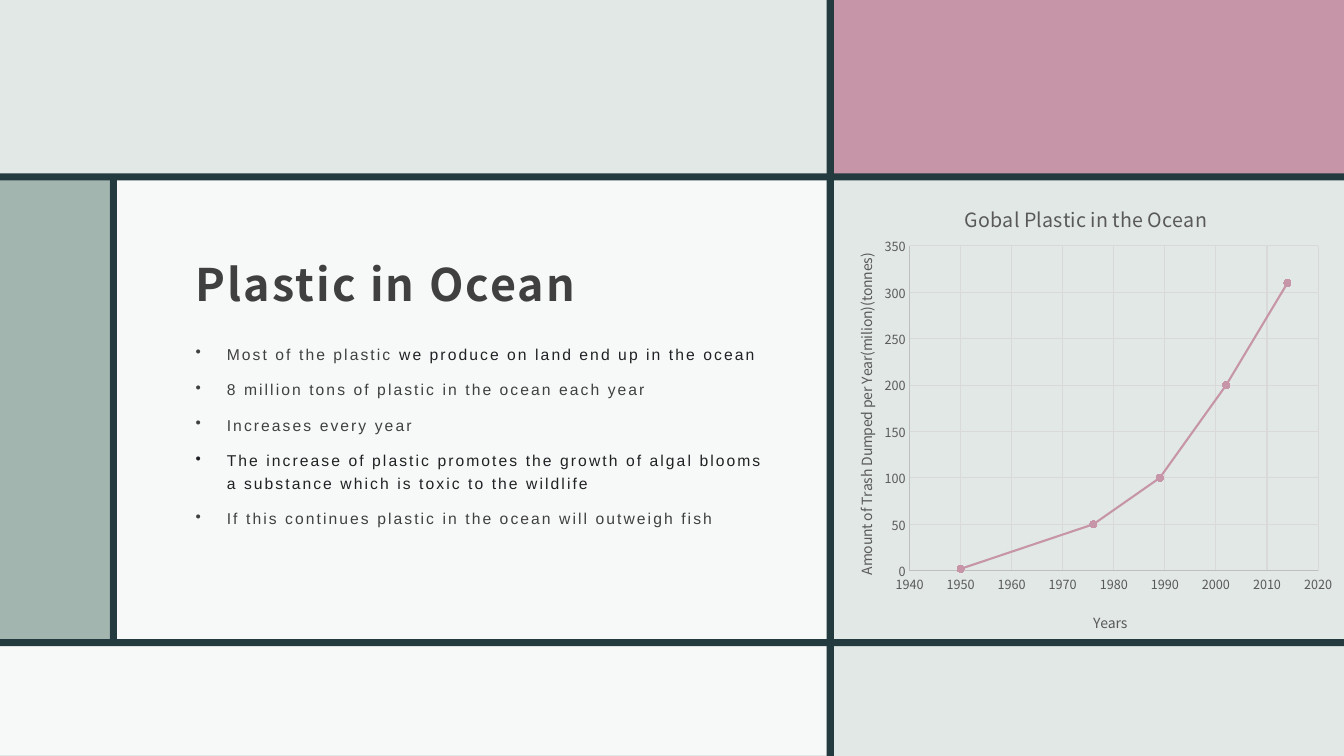
from dataclasses import dataclass

from lxml import etree
from pptx import Presentation
from pptx.chart.data import XyChartData
from pptx.dml.color import RGBColor
from pptx.enum.chart import XL_CHART_TYPE, XL_MARKER_STYLE, XL_TICK_MARK
from pptx.enum.shapes import MSO_SHAPE
from pptx.enum.text import MSO_ANCHOR
from pptx.oxml import parse_xml
from pptx.oxml.ns import nsdecls, qn
from pptx.util import Inches, Pt

RECT = MSO_SHAPE.RECTANGLE
MIDDLE, TOP = MSO_ANCHOR.MIDDLE, MSO_ANCHOR.TOP
SCATTER = XL_CHART_TYPE.XY_SCATTER_LINES
CIRCLE = XL_MARKER_STYLE.CIRCLE
NO_TICK = XL_TICK_MARK.NONE


@dataclass(frozen=True)
class Theme:
    pale: str = "E2E8E6"
    sage: str = "A2B5AF"
    rose: str = "C696A8"
    dark: str = "233A3E"
    white: str = "FFFFFF"
    text: str = "404040"
    ink: str = "202124"
    label: str = "595959"
    axis: str = "BFBFBF"
    grid: str = "D9D9D9"
    head_font: str = "Noto Sans CJK JP"
    body_font: str = "Arial"
    head: float = 32
    body: float = 11.2
    chart_head: float = 14
    axis_head: float = 10
    tick: float = 9


THEME = Theme()
WIDE, HIGH, BAR = 13.33, 7.5, 0.07

# Each bullet is a list of (text, colour) runs
BULLETS = [
    [("Most of the plastic ", THEME.text),
     ("we produce on land end up in the ocean", THEME.ink)],
    [("8 million tons of plastic in the ocean each year", THEME.text)],
    [("Increases every year", THEME.text)],
    [("The increase of plastic promotes the growth of algal blooms "
      "a substance which is toxic to the wildlife", THEME.ink)],
    [("If this continues plastic in the ocean will outweigh fish", THEME.text)],
]
POINTS = [(1950, 2), (1976, 50), (1989, 100), (2002, 200), (2014, 310)]


def rgb(color):
    return RGBColor.from_string(color)


def add_block(slide, box, color, alpha=None):
    shape = slide.shapes.add_shape(RECT, *map(Inches, box))
    shape.shadow.inherit = False
    shape.line.fill.background()
    shape.fill.solid()
    shape.fill.fore_color.rgb = rgb(color)
    if alpha:
        tint = shape.fill._xPr.find(".//" + qn("a:srgbClr"))
        etree.SubElement(tint, qn("a:alpha"), val=str(alpha * 1000))


def add_frame(slide, box, anchor):
    frame = slide.shapes.add_textbox(*map(Inches, box)).text_frame
    frame.word_wrap = True
    frame.vertical_anchor = anchor
    frame.margin_left = frame.margin_right = frame.margin_top = Inches(0.12)
    frame.margin_bottom = Inches(0.1)
    return frame


def set_font(font, size, name, color, bold=False):
    font.size, font.name, font.bold = Pt(size), name, bold
    font.color.rgb = rgb(color)


def add_run(para, text, color):
    run = para.add_run()
    run.text = text
    run.font.color.rgb = rgb(color)
    run.font._element.set("spc", "150")


def add_title(slide):
    para = add_frame(slide, (1.82, 2.09, 5.91, 1.15), MIDDLE).paragraphs[0]
    para.line_spacing = 1.5
    set_font(para.font, THEME.head, THEME.head_font, THEME.text, True)
    add_run(para, "Plastic in Ocean", THEME.text)


def add_bullets(slide):
    frame = add_frame(slide, (1.82, 3.26, 5.93, 2.72), TOP)
    for i, runs in enumerate(BULLETS):
        para = frame.add_paragraph() if i else frame.paragraphs[0]
        para.line_spacing = 1.2
        para.space_before = Pt(9.3)
        set_font(para.font, THEME.body, THEME.body_font, runs[0][1])
        props = para._p.get_or_add_pPr()
        props.set("marL", str(Inches(0.31)))
        props.set("indent", str(-Inches(0.31)))
        mark = parse_xml(f'<a:buChar {nsdecls("a")} char="•"/>')
        props.find(qn("a:defRPr")).addprevious(mark)
        for text, color in runs:
            add_run(para, text, color)


def make_layout(x, y, size=None):
    """Manual place, as shares of the chart; a size marks the plot area."""
    tags = [("xMode", "edge"), ("yMode", "edge"), ("x", x), ("y", y)]
    if size:
        tags = [("layoutTarget", "inner")] + tags + list(zip("wh", size))
    body = "".join(f'<c:{tag} val="{val}"/>' for tag, val in tags)
    return parse_xml(f'<c:layout {nsdecls("c")}><c:manualLayout>{body}'
                     "</c:manualLayout></c:layout>")


def set_head(title, text, size, x, y):
    para = title.text_frame.paragraphs[0]
    para.text = text
    set_font(para.font, size, THEME.head_font, THEME.label)
    node = title._element
    for old in node.findall(qn("c:layout")):
        node.remove(old)
    node.find(qn("c:tx")).addnext(make_layout(x, y))


def set_line(line, color, width=0.75):
    line.color.rgb = rgb(color)
    line.width = Pt(width)


def set_axis(axis, low, high, step, text, x, y):
    axis.minimum_scale, axis.maximum_scale, axis.major_unit = low, high, step
    axis.major_tick_mark = axis.minor_tick_mark = NO_TICK
    axis.has_major_gridlines = True
    set_line(axis.major_gridlines.format.line, THEME.grid)
    set_line(axis.format.line, THEME.axis)
    set_font(axis.tick_labels.font, THEME.tick, THEME.head_font, THEME.label)
    set_head(axis.axis_title, text, THEME.axis_head, x, y)


def add_graph(slide):
    data = XyChartData()
    trash = data.add_series("Series 1")
    for year, tons in POINTS:
        trash.add_data_point(year, tons)
    box = map(Inches, (8.2, 1.74, 5.13, 4.67))
    chart = slide.shapes.add_chart(SCATTER, *box, data).chart
    chart.has_legend = False
    chart.font.name, chart.font.size = THEME.head_font, Pt(THEME.axis_head)
    set_head(chart.chart_title, "Gobal Plastic in the Ocean",
             THEME.chart_head, 0.26, 0.05)
    set_axis(chart.category_axis, 1940, 2020, 10, "Years", 0.51, 0.92)
    set_axis(chart.value_axis, 0, 350, 50,
             "Amount of Trash Dumped per Year(milion)(tonnes)", 0.05, 0.16)

    plot = chart.plots[0]
    plot.vary_by_categories = False
    area = chart._chartSpace.chart.plotArea
    for old in area.findall(qn("c:layout")):
        area.remove(old)
    area.insert(0, make_layout(0.16, 0.15, (0.79, 0.69)))

    line = plot.series[0]
    line.smooth = False
    set_line(line.format.line, THEME.rose, 1.5)
    line.marker.style, line.marker.size = CIRCLE, 5
    line.marker.format.fill.solid()
    line.marker.format.fill.fore_color.rgb = rgb(THEME.rose)
    set_line(line.marker.format.line, THEME.rose)


def main():
    deck = Presentation()
    deck.slide_width, deck.slide_height = Inches(WIDE), Inches(HIGH)
    slide = deck.slides.add_slide(deck.slide_layouts[6])
    slide.background.fill.solid()
    slide.background.fill.fore_color.rgb = rgb(THEME.pale)

    # Colour panels
    add_block(slide, (0, 1.77, 1.09, 4.62), THEME.sage)
    add_block(slide, (1.09, 1.77, 7.16, 4.57), THEME.white, 75)
    add_block(slide, (8.23, 0, 5.1, 1.78), THEME.rose)
    add_block(slide, (0, 6.39, 8.2, 1.1), THEME.white, 75)

    # Dark bars between the panels
    for bar in ((1.09, 1.74, BAR, 4.62), (8.2, 0, BAR, HIGH),
                (0, 1.72, WIDE, BAR), (0, 6.34, WIDE, BAR)):
        add_block(slide, bar, THEME.dark)

    # Content
    add_title(slide)
    add_bullets(slide)
    add_graph(slide)
    deck.save("out.pptx")


if __name__ == "__main__":
    main()
